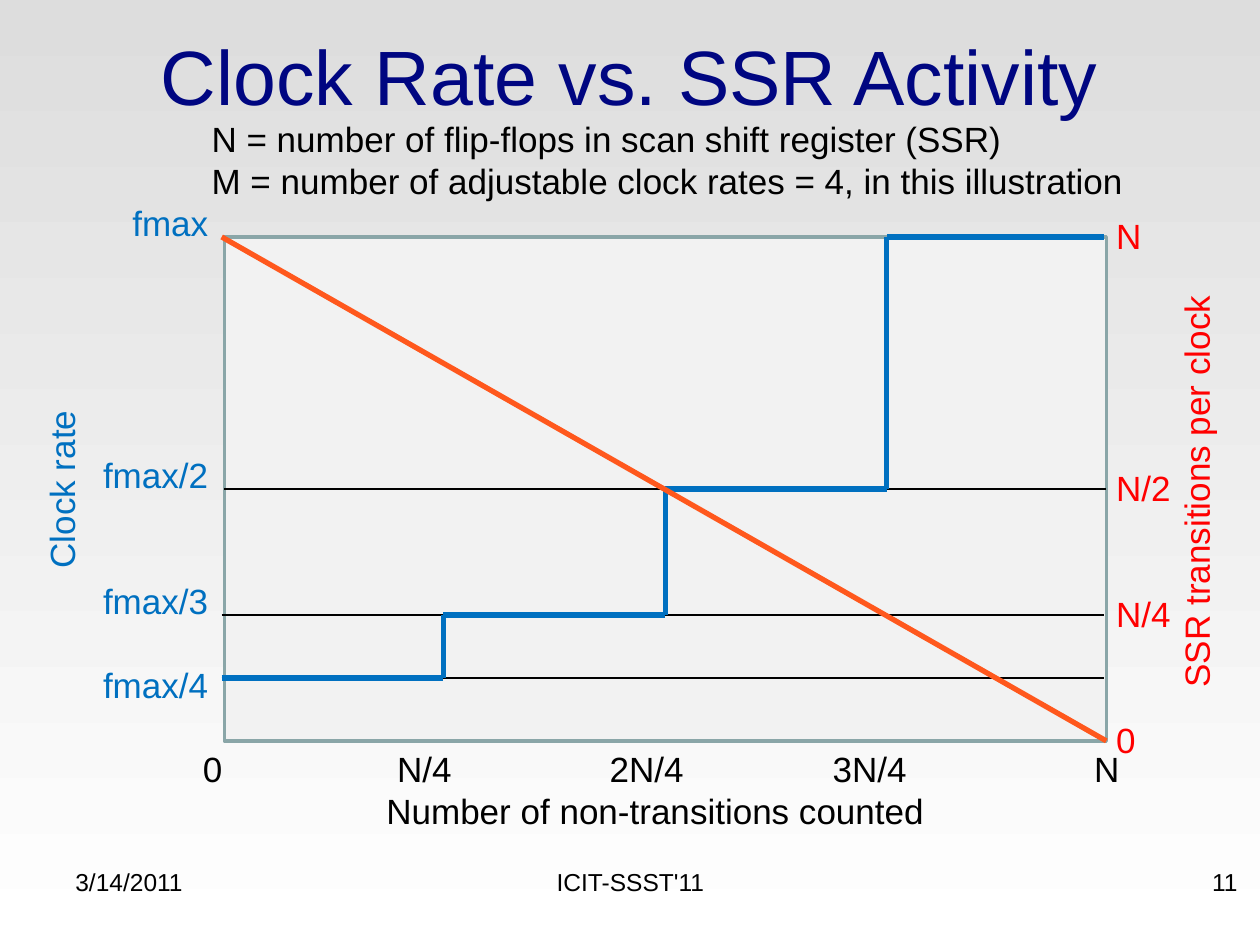
from itertools import pairwise
from typing import NamedTuple

from lxml import etree
from pptx import Presentation
from pptx import util as u
from pptx.dml.color import RGBColor
from pptx.enum import shapes, text
from pptx.oxml import ns

BLACK, BLUE, RED, NAVY, ORANGE = "000000", "0070C0", "FF0000", "000681", "FF581D"
LEFT, CENTER, RIGHT = text.PP_ALIGN.LEFT, text.PP_ALIGN.CENTER, text.PP_ALIGN.RIGHT
LINE = 24  # line pitch of the 20 pt labels

# Plot frame; the step curve and lower grid lines start slightly left of it
PLOT_X, PLOT_Y, PLOT_W, PLOT_H = 128.2, 135.4, 504, 288
BOTTOM = PLOT_Y + PLOT_H
CURVE_X, CURVE_END, STEP_W = 126.7, 630.7, 126.7
LEVELS = [BOTTOM - PLOT_H / d for d in (8, 4, 2, 1)]


class Para(NamedTuple):
    text: str
    lines_above: int = 0
    tabs: tuple[float, ...] = ()


class Label(NamedTuple):
    x: float
    y: float
    w: float
    h: float
    paras: list[Para]
    color: str = BLACK
    size: float = 20
    align: text.PP_ALIGN = LEFT
    wrap: bool = True
    rotation: float = 0
    anchor: text.MSO_ANCHOR = text.MSO_ANCHOR.TOP


class Segment(NamedTuple):
    x1: float
    y1: float
    x2: float
    y2: float
    color: str
    width: float


def rgb(value: str) -> RGBColor:
    return RGBColor.from_string(value)


def add_center_tabs(p, stops: tuple[float, ...]) -> None:
    tab_list = etree.SubElement(p._p.get_or_add_pPr(), ns.qn("a:tabLst"))
    for stop in stops:
        etree.SubElement(tab_list, ns.qn("a:tab"), pos=str(u.Pt(stop)), algn="ctr")


def add_label(s, label: Label) -> None:
    sp = s.shapes.add_textbox(u.Pt(label.x), u.Pt(label.y), u.Pt(label.w), u.Pt(label.h))
    sp.rotation = label.rotation
    tf = sp.text_frame
    tf.word_wrap = label.wrap
    tf.vertical_anchor = label.anchor
    for i, para in enumerate(label.paras):
        p = tf.add_paragraph() if i else tf.paragraphs[0]
        if para.tabs:
            add_center_tabs(p, para.tabs)
        p.alignment = label.align
        if label.size == 20:
            p.line_spacing = u.Pt(LINE)
        if para.lines_above:
            p.space_before = u.Pt(para.lines_above * LINE)
        r = p.add_run()
        r.text = para.text
        r.font.name = "Arial"
        r.font.size = u.Pt(label.size)
        r.font.color.rgb = rgb(label.color)


def add_segment(s, seg: Segment) -> None:
    ends = (u.Pt(v) for v in seg[:4])
    line = s.shapes.add_connector(shapes.MSO_CONNECTOR.STRAIGHT, *ends)
    line.line.color.rgb = rgb(seg.color)
    line.line.width = u.Pt(seg.width)
    etree.SubElement(line._element.spPr, ns.qn("a:effectLst"))


def add_background(s) -> None:
    fill = s.background.fill
    fill.gradient()
    fill.gradient_angle = 270
    for stop, color in zip(fill.gradient_stops, ("DDDDDD", "FFFFFF")):
        stop.color.rgb = rgb(color)


def add_plot_frame(s) -> None:
    sp = s.shapes.add_shape(shapes.MSO_SHAPE.RECTANGLE, u.Pt(PLOT_X), u.Pt(PLOT_Y),
                            u.Pt(PLOT_W), u.Pt(PLOT_H))
    sp.shadow.inherit = False
    sp.fill.solid()
    sp.fill.fore_color.rgb = rgb("F2F2F2")
    sp.line.color.rgb = rgb("8AA6A8")
    sp.line.width = u.Pt(2)


def step_curve() -> list[Segment]:
    edges = [CURVE_X + STEP_W * i for i in range(len(LEVELS))] + [CURVE_END]
    points = [(x, y) for i, y in enumerate(LEVELS) for x in edges[i:i + 2]]
    return [Segment(*a, *b, BLUE, 3) for a, b in pairwise(points)]


LABELS = [
    # Title and definitions
    Label(36, 21.6, 648, 42, [Para("Clock Rate vs. SSR Activity")], NAVY, 44, CENTER,
          anchor=text.MSO_ANCHOR.MIDDLE),
    Label(113.8, 63.4, 539.3, 55.4, [
        Para("N = number of flip-flops in scan shift register (SSR)"),
        Para("M = number of adjustable clock rates = 4, in this illustration")], wrap=False),
    # Clock rate axis
    Label(51.1, 111.6, 75, 298, [Para("fmax"), Para("fmax/2", 5), Para("fmax/3", 2),
                                 Para("fmax/4", 1)], BLUE, align=RIGHT),
    Label(-17.3, 263.5, 105.1, 31.7, [Para("Clock rate")], BLUE, wrap=False, rotation=270),
    # Transitions axis
    Label(630.7, 118.8, 46, 322.6, [Para("N"), Para("N/2", 5), Para("N/4", 2),
                                    Para("0", 2)], RED, wrap=False),
    Label(563.8, 264.2, 239.8, 31.7, [Para("SSR transitions per clock")], RED, wrap=False,
          rotation=270),
    # Horizontal axis
    Label(97.9, 423.4, 554.4, 55.4, [
        Para("\t0\tN/4\t2N/4\t3N/4\tN", tabs=(16.5, 137.5, 264.5, 392, 527.5)),
        Para("\tNumber of non-transitions counted", tabs=(269.5,))]),
    # Footer
    Label(36, 491.8, 167.8, 37.4, [Para("3/14/2011")], size=14),
    Label(246.2, 491.8, 228.2, 37.4, [Para("ICIT-SSST'11")], size=14, align=CENTER),
    Label(546.5, 491.8, 167.8, 37.4, [Para("11")], size=14, align=RIGHT),
]


def main() -> None:
    prs = Presentation()
    prs.slide_width, prs.slide_height = u.Pt(720), u.Pt(540)
    s = prs.slides.add_slide(prs.slide_layouts[6])
    add_background(s)

    # Frame, grid lines, step curve and falling diagonal
    add_plot_frame(s)
    for x, y in zip((CURVE_X, CURVE_X, PLOT_X), LEVELS):
        add_segment(s, Segment(x, y, x + PLOT_W, y, BLACK, 0.75))
    for seg in step_curve():
        add_segment(s, seg)
    add_segment(s, Segment(CURVE_X, PLOT_Y, PLOT_X + PLOT_W, BOTTOM, ORANGE, 3))

    for label in LABELS:
        add_label(s, label)
    prs.save("out.pptx")


if __name__ == "__main__":
    main()
